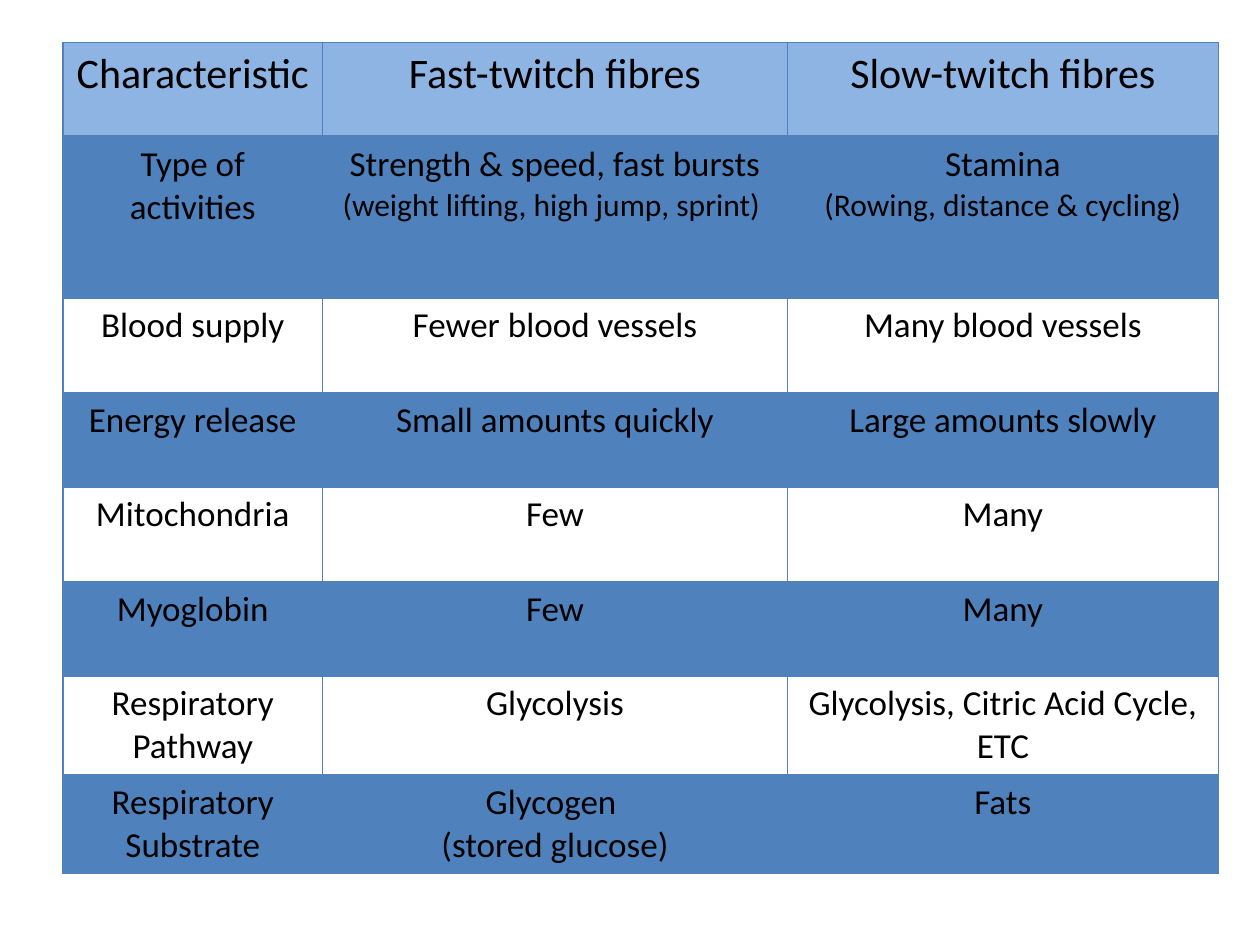
from lxml import etree
from pptx import Presentation, util as u
from pptx.dml.color import RGBColor
from pptx.enum import text
from pptx.oxml import ns

FONT = "Calibri"
BLUE, HEADER_BLUE, BLACK = "4F81BD", "8EB4E3", "000000"
SLIDE_W, SLIDE_H = 10, 7.5
HEADER_SIZE, BODY_SIZE, EXAMPLE_SIZE = 24, 20, 18

# Each cell is a tuple of lines; a second line in EXAMPLES is set smaller
HEADINGS = ["Characteristic", "Fast-twitch fibres", "Slow-twitch fibres"]
EXAMPLES = "Type of activities"
COMPARISON = [
    [(EXAMPLES,),
     ("Strength & speed, fast bursts", "(weight lifting, high jump, sprint) "),
     ("Stamina", "(Rowing, distance & cycling)")],
    [("Blood supply",), ("Fewer blood vessels",), ("Many blood vessels",)],
    [("Energy release",), ("Small amounts quickly",), ("Large amounts slowly",)],
    [("Mitochondria",), ("Few",), ("Many",)],
    [("Myoglobin",), ("Few",), ("Many",)],
    [("Respiratory Pathway",), ("Glycolysis",), ("Glycolysis, Citric Acid Cycle, ETC",)],
    [("Respiratory Substrate",), ("Glycogen ", "(stored glucose)"), ("Fats",)],
]
COLUMNS = [2.06, 3.69, 3.42]
ROW, TALL_ROW = 0.75, 1.28


def color(hex_code):
    return RGBColor.from_string(hex_code)


def write(paragraph, words, size=BODY_SIZE, ink=BLACK, align=text.PP_ALIGN.CENTER):
    paragraph.alignment = align
    run = paragraph.add_run()
    run.text = words
    run.font.name, run.font.size = FONT, u.Pt(size)
    run.font.bold = False
    run.font.color.rgb = color(ink)


def rule_cell(cell, top=1, bottom=1):
    """Draw the four borders; widths in points."""
    properties = cell._tc.get_or_add_tcPr()
    for side, width in (("L", 1), ("R", 1), ("T", top), ("B", bottom)):
        line = etree.SubElement(properties, ns.qn(f"a:ln{side}"), w=str(u.Pt(width)))
        solid = etree.SubElement(line, ns.qn("a:solidFill"))
        etree.SubElement(solid, ns.qn("a:srgbClr"), val=BLUE)


def shade(cell, hex_code, opacity=100):
    cell.fill.solid()
    cell.fill.fore_color.rgb = color(hex_code)
    if opacity < 100:
        tint = cell._tc.tcPr.find(".//" + ns.qn("a:srgbClr"))
        etree.SubElement(tint, ns.qn("a:alpha"), val=str(opacity * 1000))


def header_row(table):
    for column, heading in enumerate(HEADINGS):
        cell = table.cell(0, column)
        rule_cell(cell, bottom=2)
        shade(cell, HEADER_BLUE)
        write(cell.text_frame.paragraphs[0], heading, size=HEADER_SIZE)


def comparison_row(table, row, entries):
    has_examples = entries[0][0] == EXAMPLES
    for column, lines in enumerate(entries):
        cell = table.cell(row, column)
        rule_cell(cell, top=2 if row == 1 else 1)
        if row % 2:
            shade(cell, BLUE, opacity=20)
        else:
            cell.fill.background()
        frame = cell.text_frame
        for number, line in enumerate(lines):
            paragraph = frame.add_paragraph() if number else frame.paragraphs[0]
            small = has_examples and number
            write(paragraph, line, size=EXAMPLE_SIZE if small else BODY_SIZE)


def fibre_table(slide, left, top):
    heights = [ROW, TALL_ROW] + [ROW] * (len(COMPARISON) - 1)
    box = [u.Inches(n) for n in (left, top, sum(COLUMNS), sum(heights))]
    table = slide.shapes.add_table(len(heights), len(COLUMNS), *box).table
    table.first_row = table.horz_banding = False
    for column, width in zip(table.columns, COLUMNS):
        column.width = u.Inches(width)
    for row, height in zip(table.rows, heights):
        row.height = u.Inches(height)
    header_row(table)
    for row, entries in enumerate(COMPARISON, start=1):
        comparison_row(table, row, entries)


def main():
    deck = Presentation()
    deck.slide_width, deck.slide_height = u.Inches(SLIDE_W), u.Inches(SLIDE_H)
    slide = deck.slides.add_slide(deck.slide_layouts[6])
    fibre_table(slide, left=0.05 * SLIDE_W, top=0.045 * SLIDE_H)
    deck.save("out.pptx")


if __name__ == "__main__":
    main()
